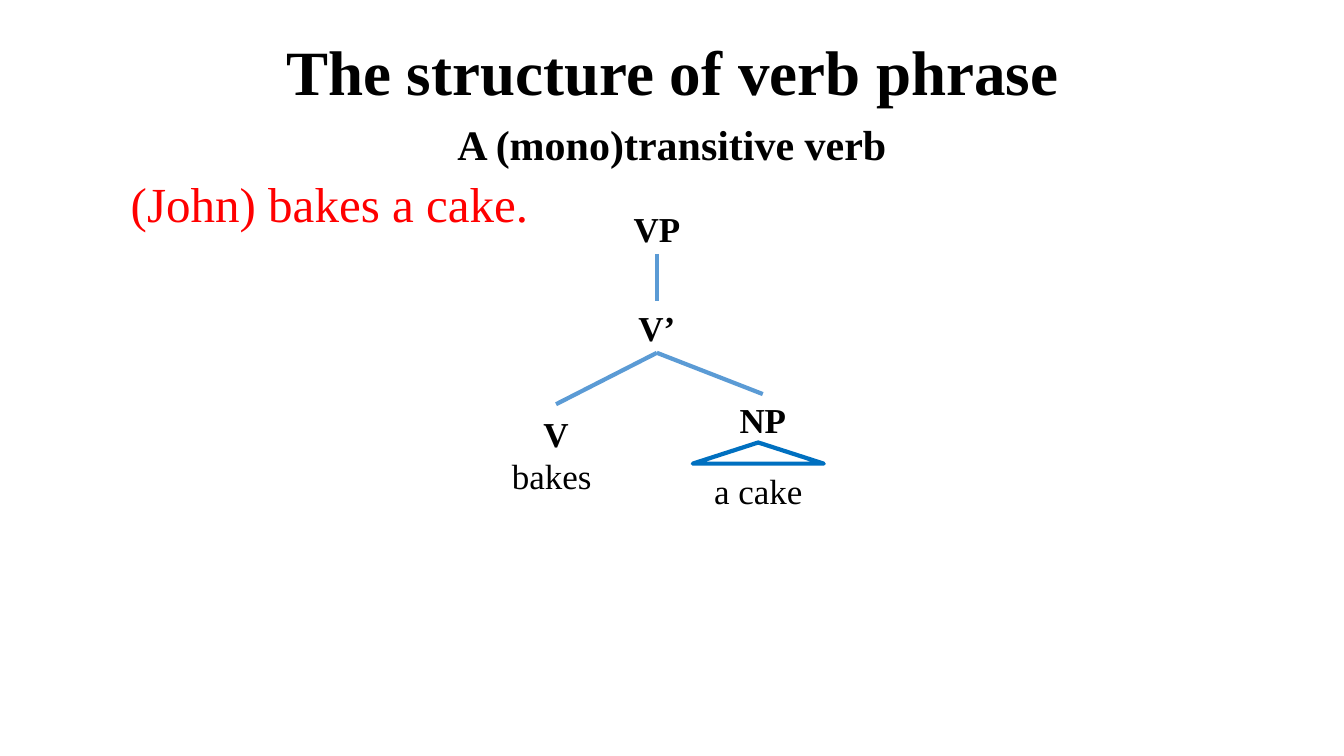
from lxml import etree
from pptx import Presentation
from pptx import util as u
from pptx.dml.color import RGBColor
from pptx.enum import shapes, text
from pptx.oxml.ns import qn

THEME = {
    "font": "Times New Roman",
    "ink": RGBColor.from_string("000000"),
    "example": RGBColor.from_string("FF0000"),
    "paper": RGBColor.from_string("FFFFFF"),
    "branch": RGBColor.from_string("5B9BD5"),
    "triangle": RGBColor.from_string("0070C0"),
    "title": u.Pt(45),
    "subtitle": u.Pt(30),
    "sentence": u.Pt(35),
    "node": u.Pt(25),
    "stroke": u.Pt(3),
}

deck = Presentation()
deck.slide_width, deck.slide_height = u.Inches(13.33), u.Inches(7.5)
page = deck.slides.add_slide(deck.slide_layouts[1])


def area(left, top, width, height):
    """Turn percentages of the slide's size into lengths."""
    sides = (deck.slide_width, deck.slide_height) * 2
    return [round(side * share / 100)
            for side, share in zip(sides, (left, top, width, height))]


def write(box, lines, size, color="ink", anchor="MIDDLE", spacing=None):
    """Fill a box with centred lines, given as (words, bold) pairs."""
    frame = box.text_frame
    frame.word_wrap = True
    frame.auto_size = text.MSO_AUTO_SIZE.NONE
    frame.vertical_anchor = text.MSO_ANCHOR[anchor]
    for index, (words, bold) in enumerate(lines):
        para = frame.add_paragraph() if index else frame.paragraphs[0]
        para.alignment = text.PP_ALIGN.CENTER
        para.line_spacing = spacing
        span = para.add_run()
        span.text = words
        formats = {"name": THEME["font"], "size": THEME[size], "bold": bold}
        for name, value in formats.items():
            setattr(span.font, name, value)
        span.font.color.rgb = THEME[color]


# Title and subtitle
title, body = page.shapes.title, page.placeholders[1]
for box, place in ((title, (6.9, 5.33, 86.27, 9.33)),
                   (body, (3.6, 15.73, 92.8, 79.33))):
    box.left, box.top, box.width, box.height = area(*place)
write(title, [("The structure of verb phrase", True)], "title", spacing=0.9)
write(body, [("A (mono)transitive verb", True)], "subtitle", anchor="TOP", spacing=0.9)
subtitle = body.text_frame.paragraphs[0]
subtitle.space_before = u.Pt(10)
layout = subtitle._p.get_or_add_pPr()
layout.set("marL", "0")
layout.set("indent", "0")
etree.SubElement(layout, qn("a:buNone"))

# Example sentence
sentence = page.shapes.add_shape(shapes.MSO_SHAPE.RECTANGLE, *area(8.85, 22.53, 31.36, 8.67))
sentence.shadow.inherit = False
sentence.fill.solid()
sentence.fill.fore_color.rgb = THEME["paper"]
sentence.line.fill.background()
write(sentence, [("(John) bakes a cake.", False)], "sentence", "example")

# Triangle that stands for the inner structure of the noun phrase
triangle = page.shapes.add_shape(
    shapes.MSO_SHAPE.ISOSCELES_TRIANGLE, *area(51.54, 58.53, 9.75, 2.8))
triangle.shadow.inherit = False
triangle.fill.background()
triangle.line.color.rgb = THEME["triangle"]
triangle.line.width = THEME["stroke"]

# Tree nodes
NODES = {
    "VP": ((45.61, 26.8, 6.53, 6.8), [("VP", True)]),
    "V bar": ((45.61, 39.87, 6.53, 6.8), [("V’", True)]),
    "V": ((37.21, 53.47, 8.33, 13.33), [("V", True), ("bakes ", False)]),
    "NP": ((53.49, 52.13, 6.53, 6.8), [("NP", True)]),
    "object": ((51.54, 61.33, 9.75, 7.2), [("a cake", False)]),
}
nodes = {}
for name, (place, lines) in NODES.items():
    nodes[name] = page.shapes.add_textbox(*area(*place))
    write(nodes[name], lines, "node")

# Branches run from the bottom of the parent to the top of the child
TOP_SITE, BOTTOM_SITE = 0, 2
for parent, child in (("VP", "V bar"), ("V bar", "V"), ("V bar", "NP")):
    branch = page.shapes.add_connector(shapes.MSO_CONNECTOR.STRAIGHT, 0, 0, 0, 0)
    branch.begin_connect(nodes[parent], BOTTOM_SITE)
    branch.end_connect(nodes[child], TOP_SITE)
    branch.line.color.rgb = THEME["branch"]
    branch.line.width = THEME["stroke"]
    etree.SubElement(branch._element.spPr, qn("a:effectLst"))

deck.save("out.pptx")
